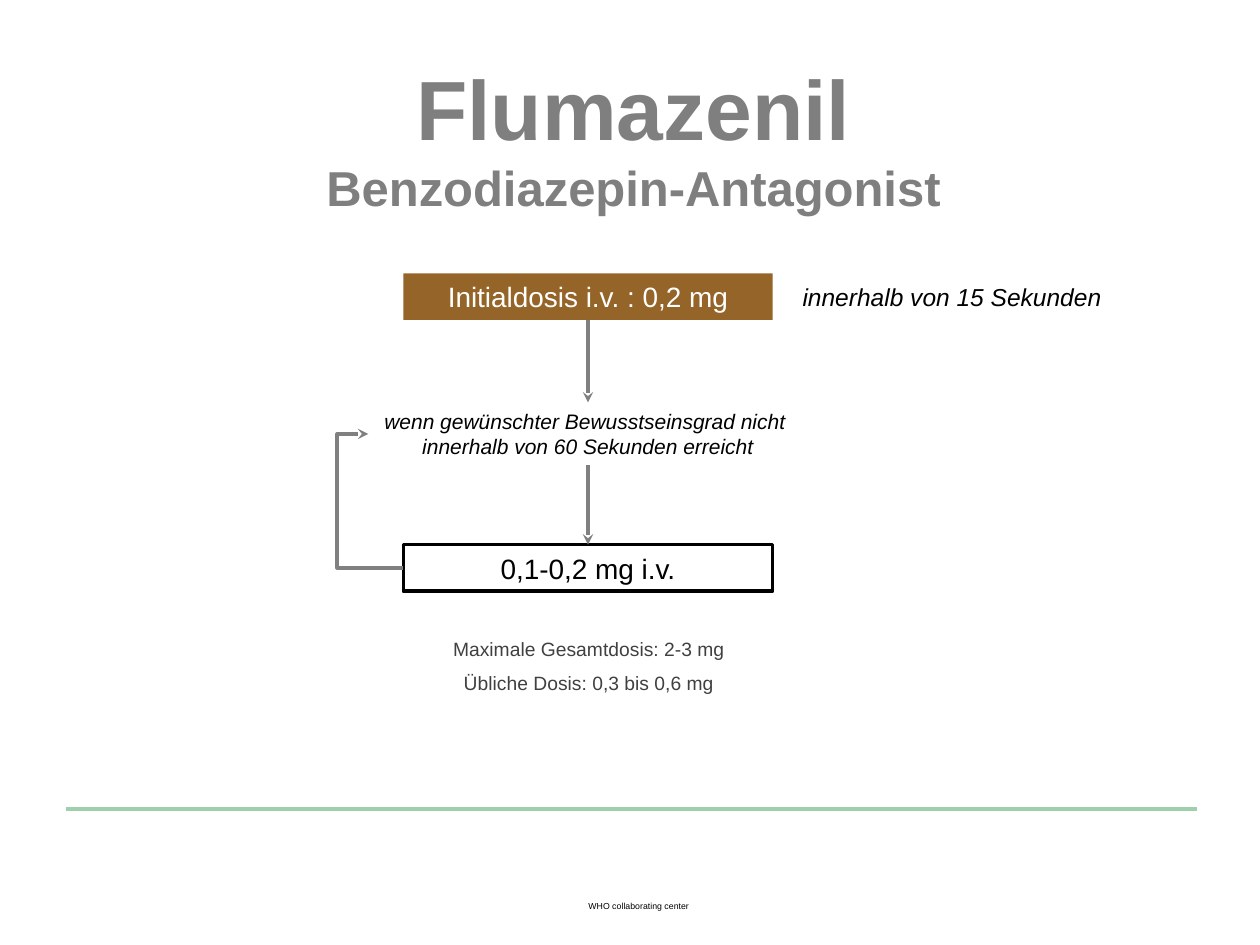
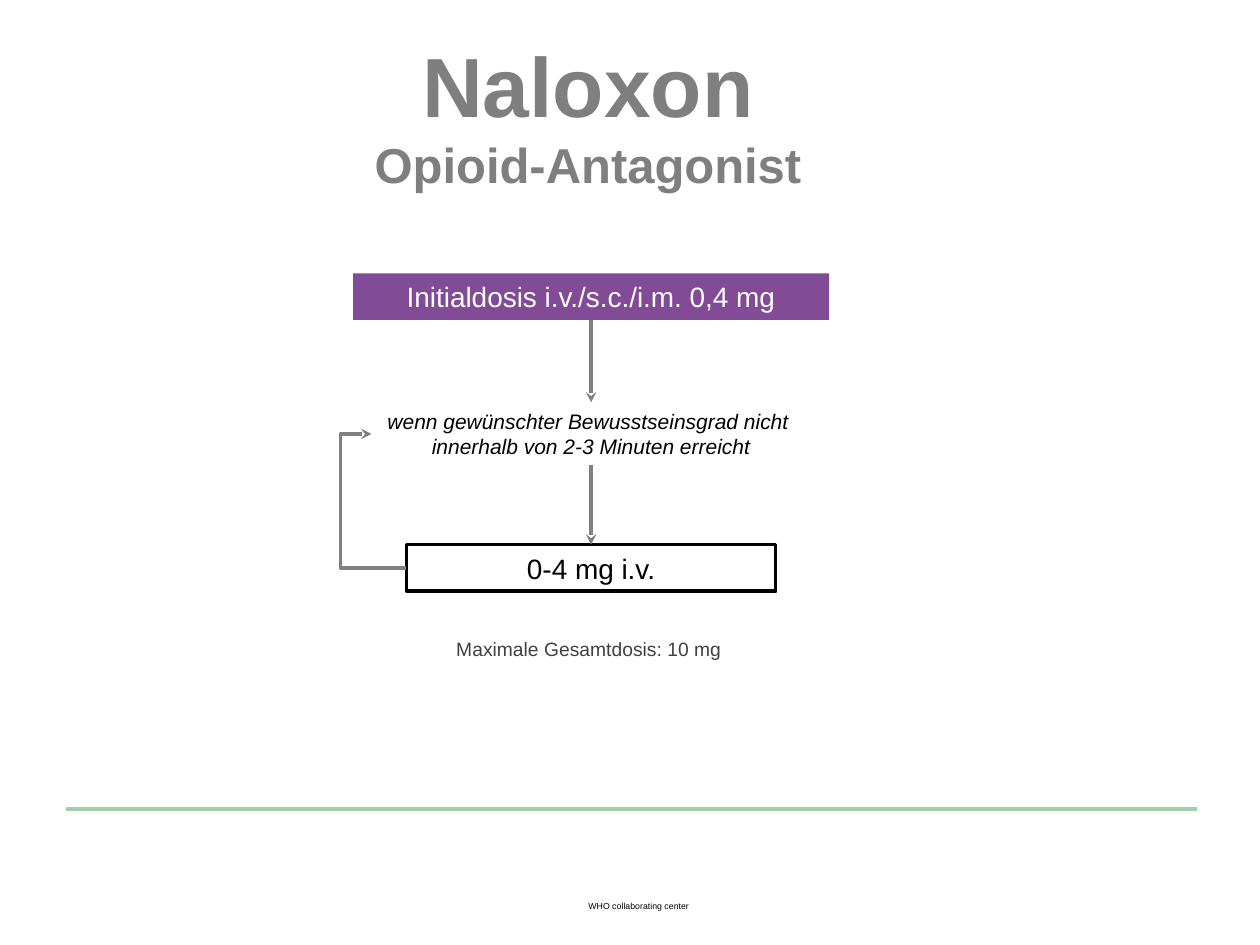
from lxml.etree import SubElement
from pptx import Presentation
from pptx.dml.color import RGBColor as RGB
from pptx.enum.shapes import MSO_CONNECTOR as Link, MSO_SHAPE as Shape
from pptx.enum.text import MSO_ANCHOR as Anchor, PP_ALIGN as Align
from pptx.oxml.ns import qn
from pptx.util import Pt

FONT = "Arial"
BLACK = RGB(0, 0, 0)
WHITE = RGB(0xFF, 0xFF, 0xFF)
TITLE = RGB(0x7F, 0x7F, 0x7F)
ARROW = RGB(0x80, 0x80, 0x80)
NOTE = RGB(0x40, 0x40, 0x40)
RULE = RGB(0x9F, 0xD0, 0xAB)
BROWN = RGB(0x95, 0x64, 0x28)
PURPLE = RGB(0x81, 0x4B, 0x95)

BOX_W, BOX_H = 211, 26.7
START_Y, CHECK_Y, NEXT_Y = 156.2, 230, 311.2
CHECK_W, CHECK_H = 251, 36


def style(par, size, color, italic=False, align=Align.CENTER):
    par.alignment = align
    font = par.font
    font.name, font.size, font.italic = FONT, Pt(size), italic
    font.color.rgb = color


def write(shape, lines, size, color, italic=False, align=Align.CENTER,
          inset=3.6, gap=0, wrap=True):
    frame = shape.text_frame
    frame.word_wrap = wrap
    frame.margin_left = frame.margin_right = Pt(inset)
    frame.margin_top = frame.margin_bottom = Pt(3.6)
    frame.text = "\n".join(lines)
    for num, par in enumerate(frame.paragraphs):
        style(par, size, color, italic, align)
        if num and gap:
            par.space_before = Pt(gap)
    return frame


def add_text(slide, x, y, w, h, lines, size, color, **opts):
    box = slide.shapes.add_textbox(Pt(x), Pt(y), Pt(w), Pt(h))
    return write(box, lines, size, color, **opts)


def add_box(slide, mid, y, w, text, color, fill=None):
    """Add a dose box centred on mid: filled, or outlined if fill is None."""
    box = slide.shapes.add_shape(Shape.RECTANGLE, Pt(mid - w / 2), Pt(y),
                                 Pt(w), Pt(BOX_H))
    box.shadow.inherit = False
    if fill:
        box.fill.solid()
        box.fill.fore_color.rgb = fill
        box.line.fill.background()
    else:
        box.fill.background()
        box.line.color.rgb = BLACK
        box.line.width = Pt(2)
    write(box, [text], 16, color)


def add_line(slide, start, end, color, width, kind=Link.STRAIGHT, head=True):
    line = slide.shapes.add_connector(kind, *map(Pt, start + end))
    line.line.color.rgb = color
    line.line.width = Pt(width)
    if head:
        SubElement(line.line._get_or_add_ln(), qn("a:tailEnd"), type="stealth")
    SubElement(line._element.spPr, qn("a:effectLst"))
    return line


def add_loop(slide, mid):
    """Lead from the repeat dose back to the check, round the left side."""
    line = add_line(slide, (mid - BOX_W / 2, NEXT_Y + BOX_H / 2),
                    (mid - CHECK_W / 2, CHECK_Y + CHECK_H / 2),
                    ARROW, 2, Link.ELBOW)
    geom = line._element.spPr.find(qn("a:prstGeom"))
    guides = geom.find(qn("a:avLst"))
    if guides is None:
        guides = SubElement(geom, qn("a:avLst"))
    SubElement(guides, qn("a:gd"), name="adj1", fmla="val 188800")


def add_title(slide, mid, y, w, drug, group):
    frame = add_text(slide, mid - w / 2, y, w, 99.4, [f"{drug}\v{group}"],
                     48, TITLE, inset=7.2, wrap=False)
    frame.vertical_anchor = Anchor.MIDDLE
    par = frame.paragraphs[0]
    par.font.bold = True
    par.runs[1].font.size = Pt(28)


def add_flow(slide, mid, start, width, fill, limit, repeat):
    add_box(slide, mid, START_Y, width, start, WHITE, fill)
    check = ["wenn gewünschter Bewusstseinsgrad nicht ",
             f"innerhalb von {limit} erreicht"]
    add_text(slide, mid - CHECK_W / 2, CHECK_Y, CHECK_W, CHECK_H, check,
             12, BLACK, italic=True)
    add_line(slide, (mid, START_Y + BOX_H), (mid, CHECK_Y), ARROW, 2)
    add_box(slide, mid, NEXT_Y, BOX_W, repeat, BLACK)
    add_line(slide, (mid, CHECK_Y + CHECK_H), (mid, NEXT_Y), ARROW, 2)
    add_loop(slide, mid)


def add_notes(slide, lines):
    add_text(slide, 47, 360.7, 579, 73.4, lines, 11, NOTE, inset=7.2, gap=6)


def new_slide(deck):
    slide = deck.slides.add_slide(deck.slide_layouts[6])
    add_line(slide, (38, 462.2), (684, 462.2), RULE, 2.5, head=False)
    foot = add_text(slide, 309.6, 512, 111, 13, ["WHO collaborating center"],
                    5, BLACK, inset=7.2)
    foot.paragraphs[0].line_spacing = 0.9
    return slide


def main():
    deck = Presentation()
    deck.slide_width, deck.slide_height = Pt(720), Pt(540)

    slide = new_slide(deck)
    add_title(slide, 362, 28, 370, "Flumazenil", "Benzodiazepin-Antagonist")
    add_notes(slide, ["Maximale Gesamtdosis: 2-3 mg",
                      "Übliche Dosis: 0,3 bis 0,6 mg"])
    add_flow(slide, 336, "Initialdosis i.v. : 0,2 mg", BOX_W, BROWN,
             "60 Sekunden", "0,1-0,2 mg i.v.")
    add_text(slide, 455, 157.7, 178.6, 24.5, ["innerhalb von 15 Sekunden"],
             14, BLACK, italic=True, align=Align.LEFT, wrap=False)

    slide = new_slide(deck)
    add_title(slide, 336, 15, 262, "Naloxon", "Opioid-Antagonist")
    add_notes(slide, ["Maximale Gesamtdosis: 10 mg"])
    add_flow(slide, 337.8, "Initialdosis i.v./s.c./i.m. 0,4 mg", 272, PURPLE,
             "2-3 Minuten", "0-4 mg i.v.")

    deck.save("out.pptx")


if __name__ == "__main__":
    main()
